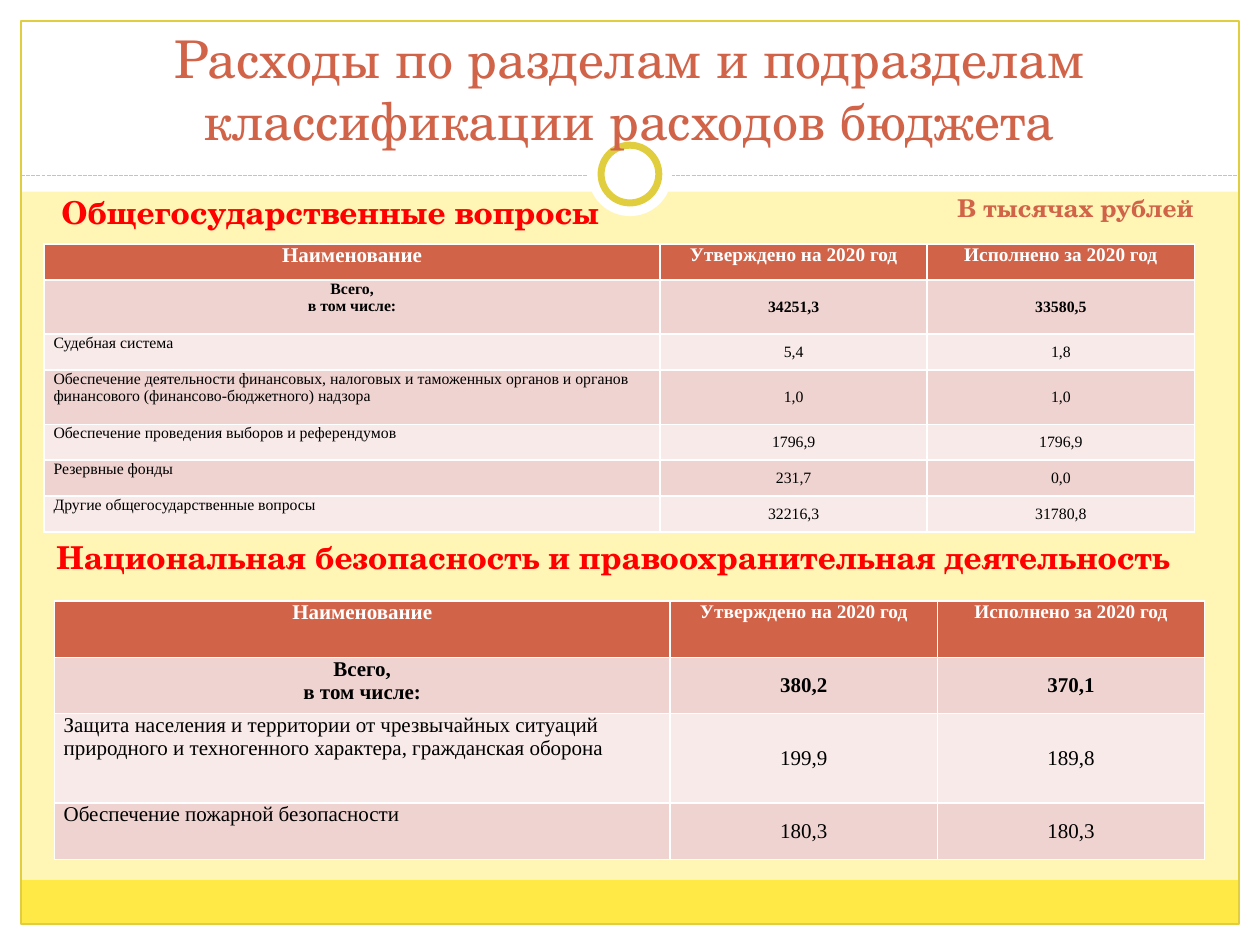
from dataclasses import dataclass

from lxml import etree
from pptx import Presentation
from pptx import util as u
from pptx.dml.color import RGBColor
from pptx.enum import dml, shapes, text
from pptx.oxml import ns


@dataclass(frozen=True)
class Theme:
    # Colours
    background: str = "FFF6B5"
    white: str = "FFFFFF"
    band: str = "FFE947"
    frame: str = "E1CE3F"
    accent: str = "D16349"
    heading: str = "FF0000"
    body: str = "000000"
    row_dark: str = "EED3D0"
    row_light: str = "F7EAE9"
    # Fonts and type sizes
    display_font: str = "TeX Gyre Schola"
    table_font: str = "Times New Roman"
    title_size: float = 29.7
    heading_size: float = 18
    unit_size: float = 14
    name_size: float = 12
    year_size: float = 11
    small_size: float = 9


THEME = Theme()
COLUMN_WIDTHS = (352, 152.7, 152.7)
HEADER = ("Наименование", "Утверждено на 2020 год", "Исполнено за 2020 год")
TOTAL = "Всего,\nв том числе:"

GENERAL_ROWS = [
    (TOTAL, "34251,3", "33580,5"),
    ("Судебная система", "5,4", "1,8"),
    ("Обеспечение деятельности финансовых, налоговых и таможенных органов "
     "и органов финансового (финансово-бюджетного) надзора", "1,0", "1,0"),
    ("Обеспечение проведения выборов и референдумов", "1796,9", "1796,9"),
    ("Резервные фонды", "231,7", "0,0"),
    ("Другие общегосударственные вопросы", "32216,3", "31780,8"),
]
SECURITY_ROWS = [
    (TOTAL, "380,2", "370,1"),
    ("Защита населения и территории от чрезвычайных ситуаций природного "
     "и техногенного характера, гражданская оборона", "199,9", "189,8"),
    ("Обеспечение пожарной безопасности", "180,3", "180,3"),
]


def rgb(value):
    return RGBColor.from_string(value)


def points(*values):
    return [u.Pt(value) for value in values]


def add_panel(page, kind, place, fill=None, line=None, weight=0.75):
    panel = page.shapes.add_shape(kind, *points(*place))
    panel.shadow.inherit = False
    if fill:
        panel.fill.solid()
        panel.fill.fore_color.rgb = rgb(fill)
    else:
        panel.fill.background()
    if line:
        panel.line.color.rgb = rgb(line)
        panel.line.width = u.Pt(weight)
    else:
        panel.line.fill.background()


def add_dashed_line(page, start, end):
    line = page.shapes.add_connector(
        shapes.MSO_CONNECTOR.STRAIGHT, *points(*start, *end))
    line.line.color.rgb = rgb(THEME.frame)
    line.line.width = u.Pt(0.75)
    line.line.dash_style = dml.MSO_LINE.SQUARE_DOT
    etree.SubElement(line._element.spPr, ns.qn("a:effectLst"))


def write(frame, words, size, font, color, bold=False, align=None):
    for index, words_in_line in enumerate(words.split("\n")):
        para = frame.add_paragraph() if index else frame.paragraphs[0]
        para.alignment = align
        span = para.add_run()
        span.text = words_in_line
        span.font.size = u.Pt(size)
        span.font.name = font
        span.font.bold = bold
        span.font.color.rgb = rgb(color)


def add_label(page, place, words, size, color, bold=True, wrap=True,
              align=None, anchor=text.MSO_ANCHOR.TOP):
    box = page.shapes.add_textbox(*points(*place))
    frame = box.text_frame
    frame.word_wrap = wrap
    frame.vertical_anchor = anchor
    if not wrap:
        frame.auto_size = text.MSO_AUTO_SIZE.SHAPE_TO_FIT_TEXT
    write(frame, words, size, THEME.display_font, color, bold, align)


def add_heading(page, place, words):
    add_label(page, place, words, THEME.heading_size, THEME.heading, wrap=False)


def add_budget_table(page, left, top, heights, rows, body_size):
    table = page.shapes.add_table(
        len(heights), len(COLUMN_WIDTHS),
        *points(left, top, sum(COLUMN_WIDTHS), sum(heights))).table
    for column, width in zip(table.columns, COLUMN_WIDTHS):
        column.width = u.Pt(width)
    for row, height in zip(table.rows, heights):
        row.height = u.Pt(height)

    for r, record in enumerate([HEADER, *rows]):
        for c, words in enumerate(record):
            cell = table.cell(r, c)
            cell.margin_left = cell.margin_right = u.Pt(5.4)
            cell.margin_top = cell.margin_bottom = 0
            if r == 0:
                fill, color = THEME.accent, THEME.white
                size = THEME.year_size if c else THEME.name_size
            else:
                fill = THEME.row_dark if r % 2 else THEME.row_light
                color, size = THEME.body, body_size
                if c:
                    cell.vertical_anchor = text.MSO_ANCHOR.MIDDLE
            cell.fill.solid()
            cell.fill.fore_color.rgb = rgb(fill)
            centred = c > 0 or r < 2
            write(cell.text_frame, words, size, THEME.table_font, color, r < 2,
                  text.PP_ALIGN.CENTER if centred else text.PP_ALIGN.LEFT)


def add_backdrop(page):
    page.background.fill.solid()
    page.background.fill.fore_color.rgb = rgb(THEME.background)
    rect, oval = shapes.MSO_SHAPE.RECTANGLE, shapes.MSO_SHAPE.OVAL
    # White margins and title area
    for place in ((0, 528, 720, 12), (0, 0, 720, 109.5),
                  (0, 0, 12, 540), (708, 0, 12, 540)):
        add_panel(page, rect, place, THEME.white)
    # Bottom band, outer frame and divider
    add_panel(page, rect, (12, 503, 696, 25), THEME.band)
    add_panel(page, rect, (12, 12, 696, 516), line=THEME.frame)
    add_dashed_line(page, (12, 100.5), (708, 100.5))
    # Ring on the divider
    add_panel(page, oval, (336, 75.5, 48, 48), THEME.white)
    add_panel(page, oval, (343.5, 83, 33, 33), THEME.white, THEME.frame, 4)


def main():
    deck = Presentation()
    deck.slide_width, deck.slide_height = points(720, 540)
    page = deck.slides.add_slide(deck.slide_layouts[6])
    add_backdrop(page)

    # Title
    add_label(page, (24, 30, 672, 60),
              "Расходы по разделам и подразделам классификации расходов бюджета",
              THEME.title_size, THEME.accent, bold=False,
              align=text.PP_ALIGN.CENTER, anchor=text.MSO_ANCHOR.BOTTOM)

    # General government section
    add_budget_table(page, 25.2, 139.5, (20.5, 31, 20.5, 31, 20.5, 20.5, 20.5),
                     GENERAL_ROWS, THEME.small_size)
    add_heading(page, (28, 106.5, 328, 29), "Общегосударственные вопросы")
    add_label(page, (540, 106.5, 163.5, 34), "В тысячах рублей",
              THEME.unit_size, THEME.accent)

    # Security section
    add_heading(page, (25.2, 304, 665, 29),
                "Национальная безопасность и правоохранительная деятельность")
    add_budget_table(page, 31, 343.5, (32.2, 32.2, 51, 32.2),
                     SECURITY_ROWS, THEME.name_size)

    deck.save("out.pptx")


if __name__ == "__main__":
    main()
